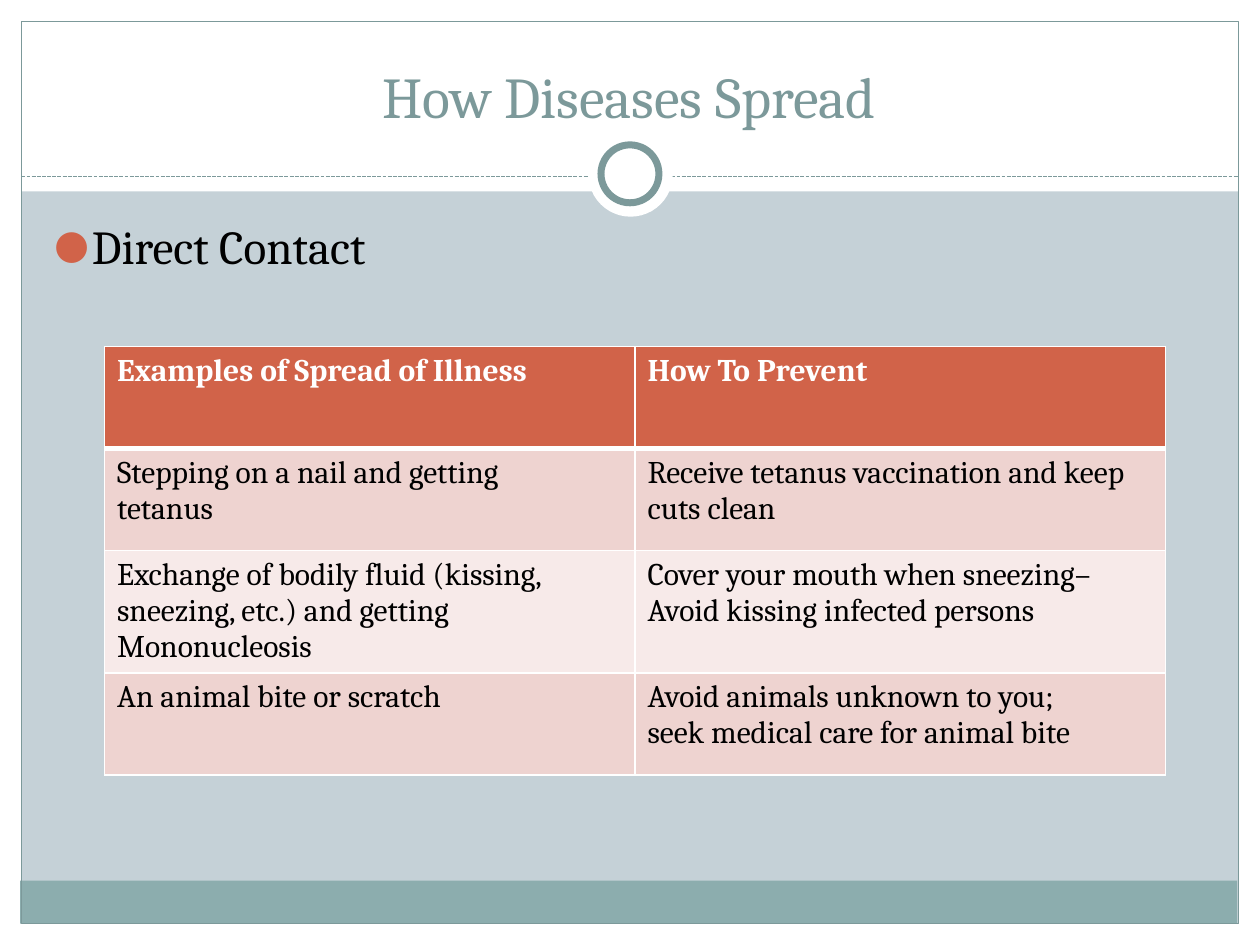
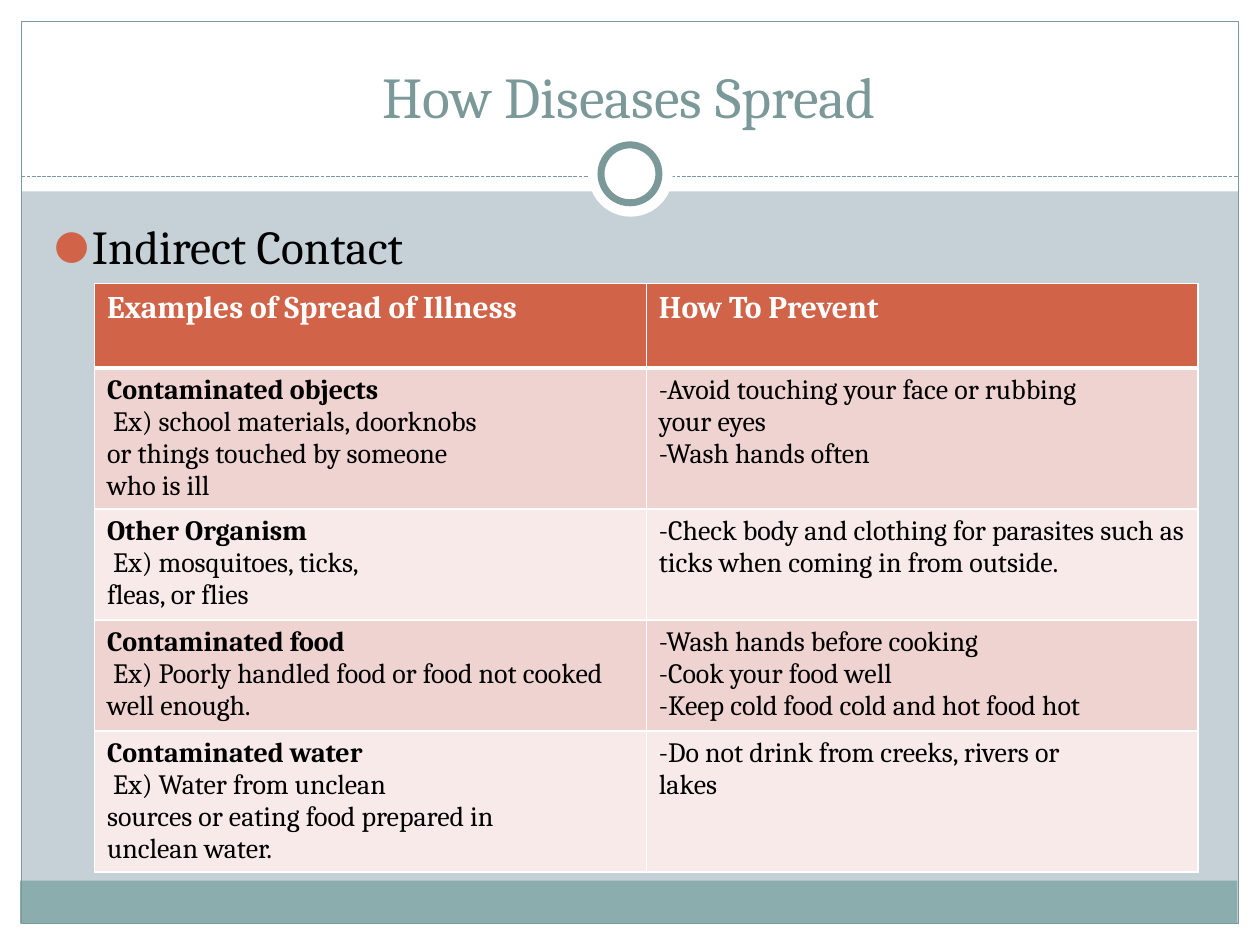
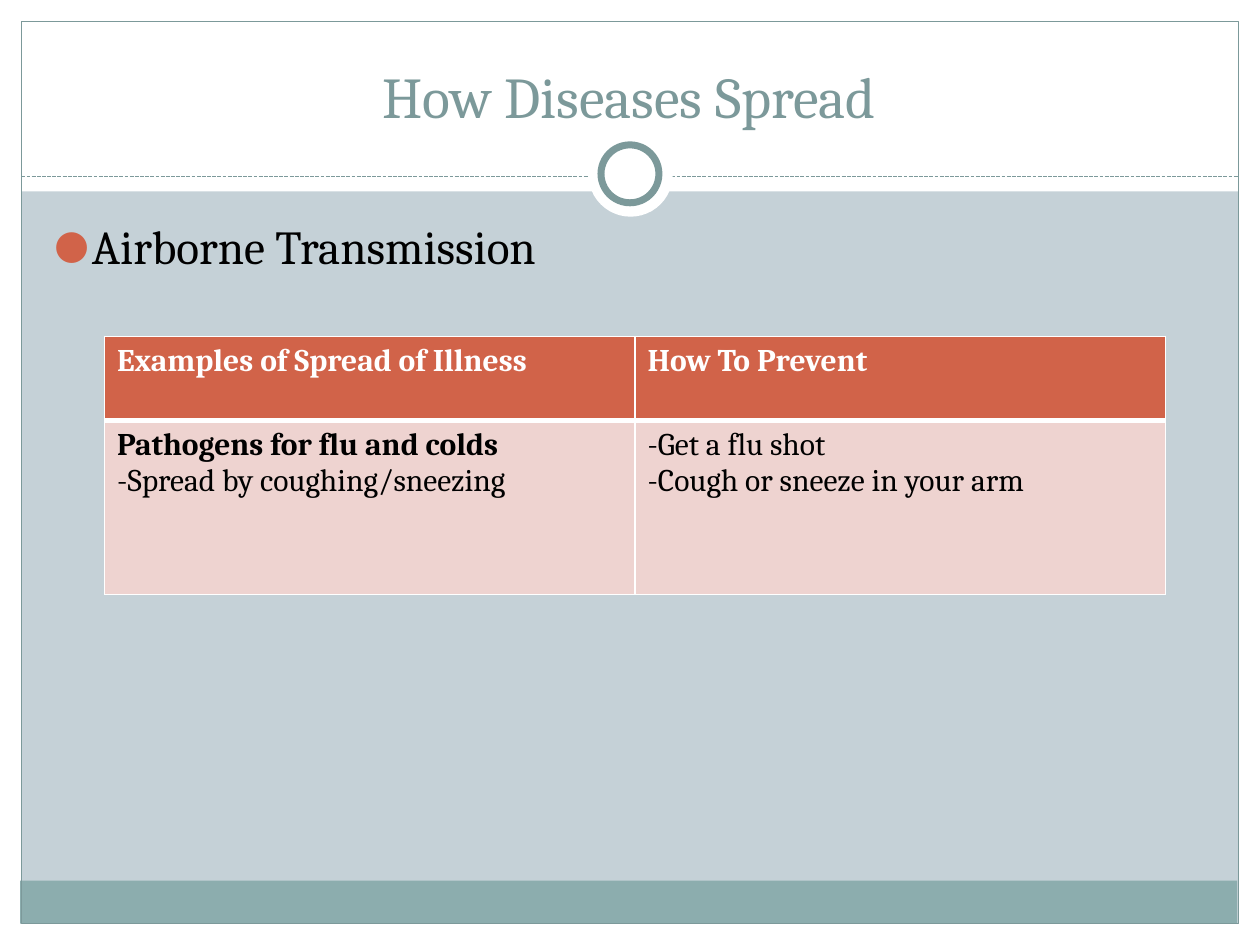
from dataclasses import dataclass
from typing import NamedTuple

from lxml.etree import SubElement
from pptx import Presentation
from pptx.dml.color import RGBColor
from pptx.enum.dml import MSO_LINE
from pptx.enum.shapes import MSO_CONNECTOR, MSO_SHAPE
from pptx.enum.text import MSO_ANCHOR, MSO_AUTO_SIZE, PP_ALIGN
from pptx.oxml.ns import qn
from pptx.util import Emu, Pt

EMU_PER_PX = 9144  # 100 px to the inch
TITLE = "How Diseases Spread"
HEADINGS = ("Examples of Spread of Illness", "How To Prevent")


@dataclass(frozen=True)
class Theme:
    font: str = "Cambria"
    background: str = "C5D1D7"
    white: str = "FFFFFF"
    black: str = "000000"
    teal: str = "7C999A"
    footer: str = "8CADAE"
    accent: str = "D16349"
    bands: tuple[str, str] = ("EED3D0", "F7EAE9")
    title_size: int = 33
    topic_size: int = 27
    heading_size: int = 18


THEME = Theme()


class Box(NamedTuple):
    left: int
    top: int
    width: int
    height: int


class FramePart(NamedTuple):
    box: Box
    fill: str | None = None
    line: str | None = None
    line_width: float = 0.75
    outline: MSO_SHAPE = MSO_SHAPE.RECTANGLE


class Illness(NamedTuple):
    """One table row: a bold lead, its examples and the prevention lines."""
    height: int
    lead: str
    examples: tuple[str, ...]
    prevention: tuple[str, ...]


@dataclass(frozen=True)
class Transmission:
    topic: str
    left: int
    top: int
    column_width: int
    heading_height: int
    text_size: int
    illnesses: tuple[Illness, ...]


TITLE_BOX = Box(33, 25, 933, 83)
TOPIC_BOX = Box(33, 167, 930, 500)
RULE_TOP, RULE_LEFT, RULE_RIGHT = 140, 17, 983

MARGINS_AND_BORDER = (
    FramePart(Box(0, 733, 1000, 17), THEME.white),
    FramePart(Box(0, 0, 1000, 152), THEME.white),
    FramePart(Box(0, 0, 17, 750), THEME.white),
    FramePart(Box(983, 0, 17, 750), THEME.white),
    FramePart(Box(16, 699, 966, 34), THEME.footer),
    FramePart(Box(17, 17, 966, 716), line=THEME.teal),
)
RING = (
    FramePart(Box(467, 105, 67, 67), THEME.white, outline=MSO_SHAPE.OVAL),
    FramePart(Box(477, 115, 46, 46), THEME.white, THEME.teal, 4, MSO_SHAPE.OVAL),
)

TRANSMISSIONS = (
    Transmission("Direct Contact", 83, 275, 421, 81, 18, (
        Illness(81, "", ("Stepping on a nail and getting", "tetanus"),
                ("Receive tetanus vaccination and keep cuts clean",)),
        Illness(97, "",
                ("Exchange of bodily fluid (kissing, sneezing, etc.) and getting Mononucleosis",),
                ("Cover your mouth when sneezing– Avoid kissing infected persons",)),
        Illness(81, "", ("An animal bite or scratch",),
                ("Avoid animals unknown to you;", "seek medical care for animal bite")),
    )),
    Transmission("Indirect Contact", 75, 225, 438, 67, 16, (
        Illness(112, "Contaminated objects",
                (" Ex) school materials, doorknobs", "or things touched by someone",
                 "who is ill"),
                ("-Avoid touching your face or rubbing", "your eyes", "-Wash hands often")),
        Illness(88, "Other Organism", (" Ex) mosquitoes, ticks,", "fleas, or flies"),
                ("-Check body and clothing for parasites such as "
                 "ticks when coming in from outside.",)),
        Illness(88, "Contaminated food",
                (" Ex) Poorly handled food or food not cooked well enough.",),
                ("-Wash hands before cooking", "-Cook your food well",
                 "-Keep cold food cold and hot food hot")),
        Illness(112, "Contaminated water",
                (" Ex) Water from unclean", "sources or eating food prepared in",
                 "unclean water."),
                ("-Do not drink from creeks, rivers or", "lakes")),
    )),
    Transmission("Airborne Transmission", 83, 267, 421, 67, 18, (
        Illness(138, "Pathogens for flu and colds", ("-Spread by coughing/sneezing",),
                ("-Get a flu shot", "-Cough or sneeze in your arm")),
    )),
)


def px(length: int) -> Emu:
    return Emu(length * EMU_PER_PX)


def rgb(color: str) -> RGBColor:
    return RGBColor.from_string(color)


def format_runs(paragraph, size: int, color: str, bold: bool = False) -> None:
    for run in paragraph.runs:
        run.font.name = THEME.font
        run.font.size = Pt(size)
        run.font.bold = bold
        run.font.color.rgb = rgb(color)


def add_frame_part(slide, part: FramePart):
    shape = slide.shapes.add_shape(part.outline, *map(px, part.box))
    shape.shadow.inherit = False
    if part.fill:
        shape.fill.solid()
        shape.fill.fore_color.rgb = rgb(part.fill)
    else:
        shape.fill.background()
    if part.line:
        shape.line.color.rgb = rgb(part.line)
        shape.line.width = Pt(part.line_width)
    else:
        shape.line.fill.background()
    return shape


def add_title_rule(slide):
    rule = slide.shapes.add_connector(
        MSO_CONNECTOR.STRAIGHT, px(RULE_LEFT), px(RULE_TOP), px(RULE_RIGHT), px(RULE_TOP))
    rule.line.color.rgb = rgb(THEME.teal)
    rule.line.width = Pt(0.75)
    rule.line.dash_style = MSO_LINE.SQUARE_DOT
    SubElement(rule.element.spPr, qn("a:effectLst"))
    return rule


def place(placeholder, box: Box) -> None:
    placeholder.left, placeholder.top, placeholder.width, placeholder.height = map(px, box)


def prepare_layout(layout) -> None:
    """Keep only the title and body placeholders and put them in place."""
    boxes = {0: TITLE_BOX, 1: TOPIC_BOX}
    for placeholder in list(layout.placeholders):
        index = placeholder.placeholder_format.idx
        if index in boxes:
            place(placeholder, boxes[index])
        else:
            layout.shapes.element.remove(placeholder.element)


def move_frame_to_layout(slide, layout) -> None:
    """Draw the frame on a slide, then hand it to the layout that all slides share."""
    frame = [add_frame_part(slide, part) for part in MARGINS_AND_BORDER]
    frame.append(add_title_rule(slide))
    frame += [add_frame_part(slide, part) for part in RING]
    first_placeholder = layout.placeholders[0].element
    for shape in frame:
        first_placeholder.addprevious(shape.element)


def write_title(slide) -> None:
    frame = slide.shapes.title.text_frame
    frame.text = TITLE
    frame.auto_size = MSO_AUTO_SIZE.NONE
    frame.vertical_anchor = MSO_ANCHOR.BOTTOM
    frame.paragraphs[0].alignment = PP_ALIGN.CENTER
    format_runs(frame.paragraphs[0], THEME.title_size, THEME.teal)


def write_topic(slide, topic: str) -> None:
    frame = slide.placeholders[1].text_frame
    frame.text = topic
    frame.auto_size = MSO_AUTO_SIZE.NONE
    paragraph = frame.paragraphs[0]
    format_runs(paragraph, THEME.topic_size, THEME.black)
    properties = paragraph._p.get_or_add_pPr()
    properties.set("marL", str(px(30)))
    properties.set("indent", str(px(-30)))
    bullet_color = SubElement(properties, qn("a:buClr"))
    SubElement(bullet_color, qn("a:srgbClr"), val=THEME.accent)
    SubElement(properties, qn("a:buSzPct"), val="85000")
    SubElement(properties, qn("a:buFont"), typeface=THEME.font)
    SubElement(properties, qn("a:buChar"), char="●")


def add_borders(cell, top: int, bottom: int) -> None:
    properties = cell._tc.get_or_add_tcPr()
    for side, width in (("L", 1), ("R", 1), ("T", top), ("B", bottom)):
        border = SubElement(properties, qn(f"a:ln{side}"), w=str(Pt(width)))
        fill = SubElement(border, qn("a:solidFill"))
        SubElement(fill, qn("a:srgbClr"), val=THEME.white)


def fill_cell(cell, lines: tuple[str, ...], size: int, color: str, fill: str,
              bold_first: bool = False) -> None:
    cell.text_frame.text = "\n".join(lines)
    for position, paragraph in enumerate(cell.text_frame.paragraphs):
        format_runs(paragraph, size, color, bold_first and position == 0)
    cell.fill.solid()
    cell.fill.fore_color.rgb = rgb(fill)


def add_prevention_table(slide, way: Transmission) -> None:
    heights = [way.heading_height, *(illness.height for illness in way.illnesses)]
    box = Box(way.left, way.top, 2 * way.column_width, sum(heights))
    table = slide.shapes.add_table(len(heights), 2, *map(px, box)).table
    for row, height in zip(table.rows, heights):
        row.height = px(height)
    for index, row in enumerate(table.rows):
        for cell in row.cells:
            add_borders(cell, top=3 if index == 1 else 1, bottom=3 if index == 0 else 1)
    for cell, heading in zip(table.rows[0].cells, HEADINGS):
        fill_cell(cell, (heading,), THEME.heading_size, THEME.white, THEME.accent, True)
    for index, illness in enumerate(way.illnesses):
        example, prevention = table.rows[index + 1].cells
        band = THEME.bands[index % 2]
        lead = (illness.lead,) if illness.lead else ()
        fill_cell(example, lead + illness.examples, way.text_size, THEME.black, band, bool(lead))
        fill_cell(prevention, illness.prevention, way.text_size, THEME.black, band)


def main() -> None:
    deck = Presentation()
    deck.slide_width, deck.slide_height = px(1000), px(750)
    background = deck.slide_master.background.fill
    background.solid()
    background.fore_color.rgb = rgb(THEME.background)
    layout = deck.slide_layouts[1]
    prepare_layout(layout)
    for index, way in enumerate(TRANSMISSIONS):
        slide = deck.slides.add_slide(layout)
        if index == 0:
            move_frame_to_layout(slide, layout)
        write_title(slide)
        write_topic(slide, way.topic)
        add_prevention_table(slide, way)
    deck.save("out.pptx")


if __name__ == "__main__":
    main()
